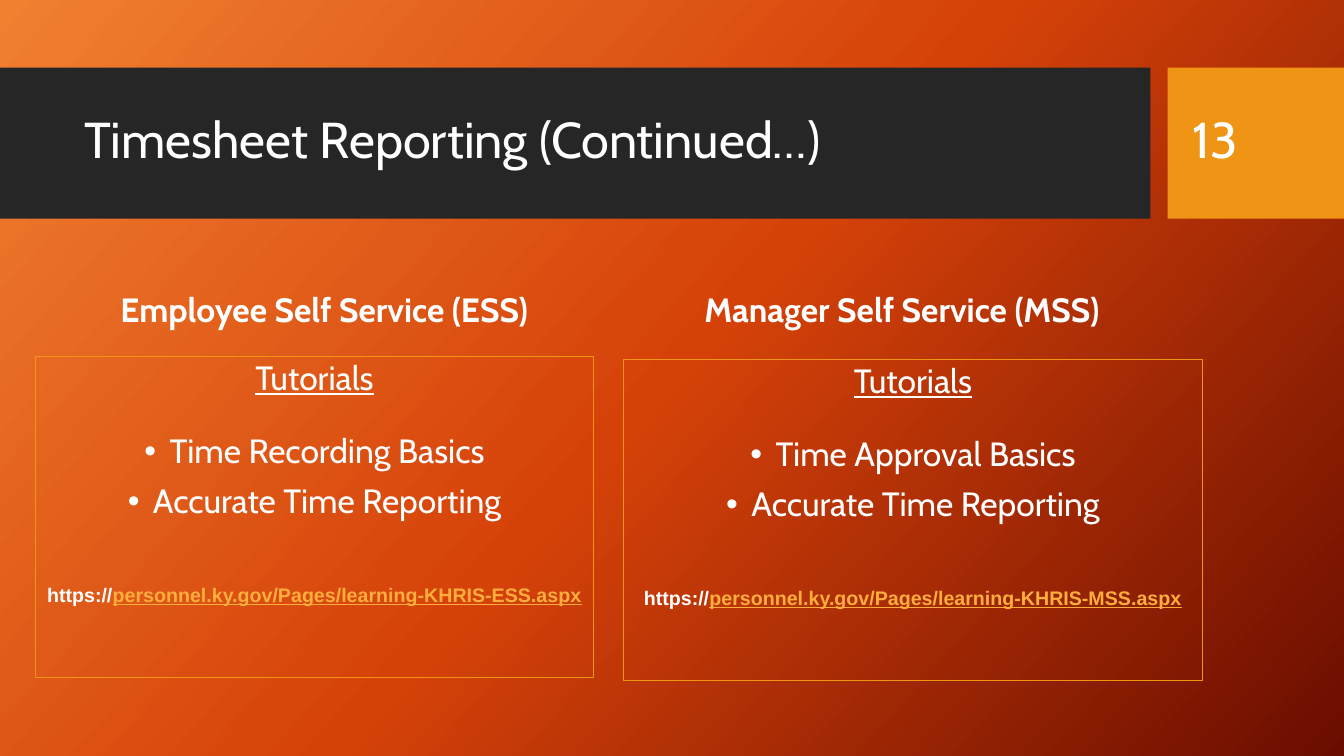
import copy
from dataclasses import dataclass

import pptx
import pptx.dml.color
import pptx.enum.shapes
import pptx.enum.text
import pptx.oxml
import pptx.oxml.ns
import pptx.util

Inches = pptx.util.Inches
Pt = pptx.util.Pt
Align = pptx.enum.text.PP_ALIGN
Anchor = pptx.enum.text.MSO_ANCHOR

WHITE, DARK, GOLD, LINK = "FFFFFF", "262626", "F09415", "FFAE3E"
GLOW = ("F18031", "D54209", "6A0D00")


@dataclass
class Box:
    left: float
    top: float
    width: float
    height: float


@dataclass
class Span:
    text: str
    size: float = 24
    font: str = "Cabin"
    color: str = WHITE
    bold: bool = False
    under: bool = False


@dataclass
class Line:
    spans: list[Span]
    before: float = 0
    bullet: bool = False
    align: Align = Align.CENTER


@dataclass
class Panel:
    head: str
    head_box: Box
    box: Box
    topics: list[str]
    page: str


PANELS = [
    Panel("Employee Self Service (ESS)", Box(0.77, 2.56, 4.89, 0.76),
          Box(0.35, 3.54, 5.54, 3.18),
          ["Time Recording Basics", "Accurate Time Reporting"],
          "personnel.ky.gov/Pages/learning-KHRIS-ESS.aspx"),
    Panel("Manager Self Service (MSS)", Box(6.5, 2.56, 4.89, 0.76),
          Box(6.18, 3.57, 5.75, 3.18),
          ["Time Approval Basics", "Accurate Time Reporting"],
          "personnel.ky.gov/Pages/learning-KHRIS-MSS.aspx"),
]


def rgb(code: str) -> pptx.dml.color.RGBColor:
    return pptx.dml.color.RGBColor.from_string(code)


def place(box: Box) -> list[int]:
    return [Inches(n) for n in (box.left, box.top, box.width, box.height)]


def paint(slide) -> None:
    """Give the slide its diagonal three-stop gradient."""
    fill = slide.background.fill
    fill.gradient()
    fill.gradient_angle = 360 - 42
    stops = slide.element.find(".//" + pptx.oxml.ns.qn("a:gsLst"))
    stops.insert(1, copy.deepcopy(stops[0]))
    for stop, code, part in zip(fill.gradient_stops, GLOW, (0, 0.5, 1)):
        stop.color.rgb = rgb(code)
        stop.position = part


def add_rect(slide, box: Box, fill: str = "", line: str = ""):
    kind = pptx.enum.shapes.MSO_SHAPE.RECTANGLE
    rect = slide.shapes.add_shape(kind, *place(box))
    rect.shadow.inherit = False
    if fill:
        rect.fill.solid()
        rect.fill.fore_color.rgb = rgb(fill)
    else:
        rect.fill.background()
    if line:
        rect.line.color.rgb = rgb(line)
        rect.line.width = Pt(0.75)
    else:
        rect.line.fill.background()
    return rect


def add_dot(para) -> None:
    """Put a hanging bullet before the paragraph."""
    props = para._p.get_or_add_pPr()
    props.set("marL", str(Inches(0.25)))
    props.set("indent", str(-Inches(0.25)))
    space = pptx.oxml.ns.nsdecls("a")
    for tag in ('buFont {} typeface="Arial"', 'buChar {} char="•"'):
        props.append(pptx.oxml.parse_xml(f"<a:{tag.format(space)}/>"))


def write(shape, lines: list[Line], anchor: Anchor) -> None:
    frame = shape.text_frame
    frame.word_wrap = True
    frame.vertical_anchor = anchor
    for i, line in enumerate(lines):
        para = frame.add_paragraph() if i else frame.paragraphs[0]
        if line.bullet:
            add_dot(para)
        para.alignment = line.align
        para.line_spacing = 0.9
        if line.before:
            para.space_before = Pt(line.before)
        for span in line.spans:
            run = para.add_run()
            run.text = span.text
            font = run.font
            font.name, font.size = span.font, Pt(span.size)
            font.bold, font.underline = span.bold, span.under
            font.color.rgb = rgb(span.color)


def add_text(slide, box: Box, line: Line, anchor: Anchor) -> None:
    write(slide.shapes.add_textbox(*place(box)), [line], anchor)


def add_panel(slide, panel: Panel) -> None:
    head = Line([Span(panel.head, bold=True)])
    add_text(slide, panel.head_box, head, Anchor.BOTTOM)
    lines = [Line([Span("Tutorials", under=True)])]
    for topic, gap in zip(panel.topics, (26, 10)):
        lines.append(Line([Span(topic)], gap, bullet=True))
    lines.append(Line([
        Span("https://", 14, "Arial", bold=True),
        Span(panel.page, 14, "Arial", LINK, bold=True, under=True),
    ], 46))
    write(add_rect(slide, panel.box, line=GOLD), lines, Anchor.TOP)


def main() -> None:
    deck = pptx.Presentation()
    deck.slide_width, deck.slide_height = Inches(13.33), Inches(7.5)
    slide = deck.slides.add_slide(deck.slide_layouts[6])
    paint(slide)
    add_rect(slide, Box(0, 0.67, 11.41, 1.5), DARK)
    add_rect(slide, Box(11.58, 0.67, 1.75, 1.5), GOLD)
    title = Line([Span("Timesheet Reporting (Continued…)", 36)], align=Align.LEFT)
    add_text(slide, Box(0.74, 0.82, 10.51, 1.18), title, Anchor.MIDDLE)
    for panel in PANELS:
        add_panel(slide, panel)
    count = Line([Span("13", 36)], align=Align.LEFT)
    add_text(slide, Box(11.73, 0.82, 1.26, 1.19), count, Anchor.MIDDLE)
    deck.save("out.pptx")


if __name__ == "__main__":
    main()
